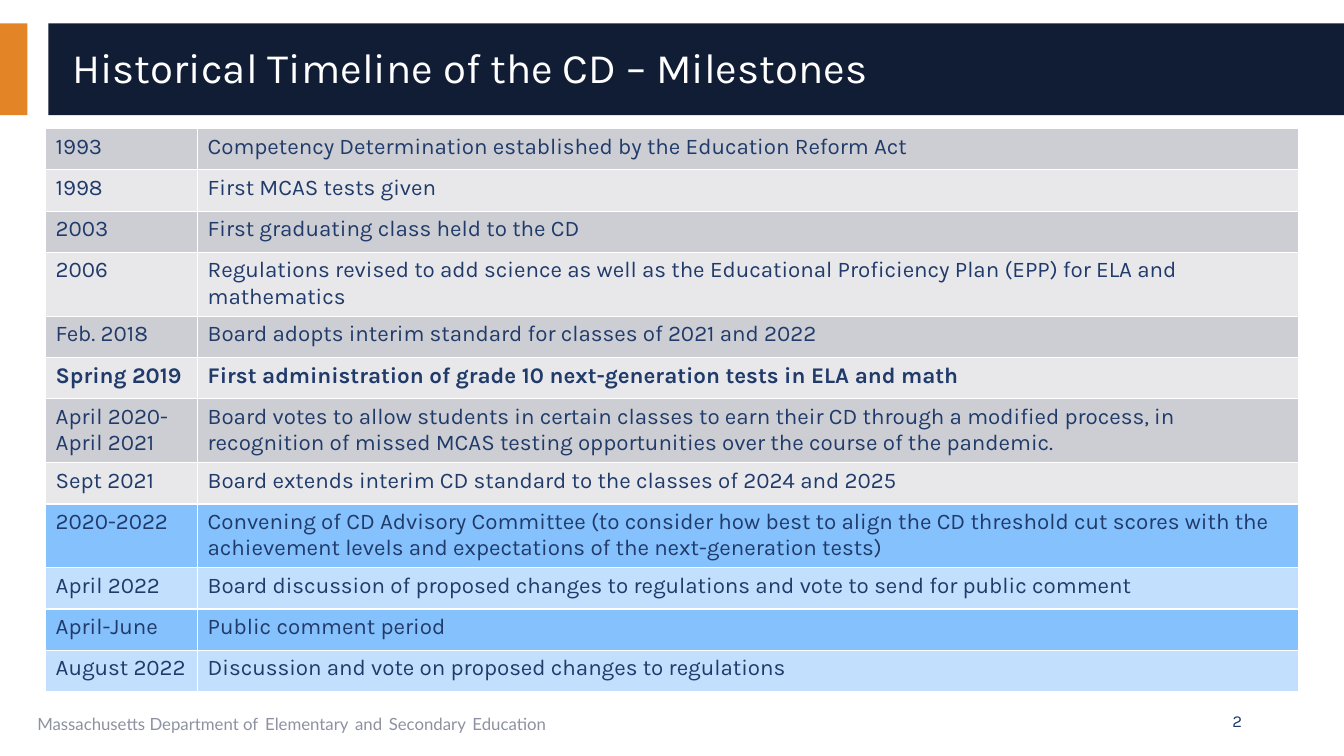
import itertools

import lxml.etree
import pptx
import pptx.dml.color
import pptx.enum.shapes
import pptx.enum.text
import pptx.oxml.ns
import pptx.util

COLORS = {
    "orange": "E38526",
    "navy": "101D35",
    "ink": "203B6A",
    "muted": "8D92A1",
    "white": "FFFFFF",
    "gray": "CDCED4",
    "pale_gray": "E8E8EB",
    "blue": "85C1FC",
    "pale_blue": "C2E0FD",
}

PAST = [
    ("1993", "Competency Determination established by the Education Reform Act"),
    ("1998", "First MCAS tests given"),
    ("2003", "First graduating class held to the CD"),
    ("2006", "Regulations revised to add science as well as the Educational "
             "Proficiency Plan (EPP) for ELA and mathematics"),
    ("Feb. 2018", "Board adopts interim standard for classes of 2021 and 2022"),
    ("Spring 2019", "First administration of grade 10 next-generation tests in ELA and math"),
    ("April 2020-April 2021", "Board votes to allow students in certain classes to earn their CD "
                              "through a modified process, in recognition of missed MCAS testing "
                              "opportunities over the course of the pandemic."),
    ("Sept 2021", "Board extends interim CD standard to the classes of 2024 and 2025"),
]
CURRENT = [
    ("2020-2022", "Convening of CD Advisory Committee (to consider how best to align the CD "
                  "threshold cut scores with the achievement levels and expectations of the "
                  "next-generation tests)"),
    ("April 2022", "Board discussion of proposed changes to regulations and vote to send for "
                   "public comment"),
    ("April-June", "Public comment period"),
    ("August 2022", "Discussion and vote on proposed changes to regulations"),
]
HIGHLIGHT = "Spring 2019"
FOOTER = ["Massachusetts Department of", "Elementary", "and", "Secondary", "Education"]


def rgb(color):
    return pptx.dml.color.RGBColor.from_string(COLORS[color])


def write(paragraph, text, size=16, color="ink", font="Karla", bold=False):
    run = paragraph.add_run()
    run.text = text
    run.font.size = pptx.util.Pt(size)
    run.font.name = font
    run.font.bold = bold
    run.font.color.rgb = rgb(color)


def place(*lengths):
    return [pptx.util.Cm(length) for length in lengths]


class Deck:
    def __init__(self):
        self.presentation = pptx.Presentation()
        self.presentation.slide_width = pptx.util.Cm(33.87)
        self.presentation.slide_height = pptx.util.Cm(19.05)
        self.slide = self.presentation.slides.add_slide(self.presentation.slide_layouts[5])

    def bar(self, bounds, color):
        bar = self.slide.shapes.add_shape(
            pptx.enum.shapes.MSO_SHAPE.RECTANGLE, *place(*bounds))
        bar.shadow.inherit = False
        bar.fill.solid()
        bar.fill.fore_color.rgb = rgb(color)
        bar.line.fill.background()
        self.slide.shapes.title.element.addprevious(bar.element)

    def title(self, text, bounds):
        title = self.slide.shapes.title
        title.left, title.top, title.width, title.height = place(*bounds)
        title.text_frame.auto_size = pptx.enum.text.MSO_AUTO_SIZE.NONE
        title.text_frame.vertical_anchor = pptx.enum.text.MSO_ANCHOR.MIDDLE
        heading = title.text_frame.paragraphs[0]
        heading.alignment = pptx.enum.text.PP_ALIGN.LEFT
        heading.line_spacing = 0.9
        write(heading, text, size=30, color="white")

    def text(self, bounds, align="LEFT", anchor="TOP"):
        frame = self.slide.shapes.add_textbox(*place(*bounds)).text_frame
        frame.word_wrap = True
        frame.vertical_anchor = pptx.enum.text.MSO_ANCHOR[anchor]
        frame.paragraphs[0].alignment = pptx.enum.text.PP_ALIGN[align]
        return frame.paragraphs[0]

    def border(self, cell):
        properties = cell._tc.get_or_add_tcPr()
        qn = pptx.oxml.ns.qn
        for side in ("a:lnL", "a:lnR", "a:lnT", "a:lnB"):
            line = lxml.etree.SubElement(properties, qn(side), w="12700")
            fill = lxml.etree.SubElement(line, qn("a:solidFill"))
            lxml.etree.SubElement(fill, qn("a:srgbClr"), val=COLORS["white"])

    def table(self, milestones, fills, bounds, widths):
        table = self.slide.shapes.add_table(
            len(milestones), len(widths), *place(*bounds)).table
        table.first_row = table.horz_banding = False
        for column, width in zip(table.columns, widths):
            column.width = pptx.util.Cm(width)
        for row, milestone, fill in zip(table.rows, milestones, fills):
            row.height = pptx.util.Cm(bounds[3] / len(milestones))
            for cell, text in zip(row.cells, milestone):
                self.border(cell)
                cell.fill.solid()
                cell.fill.fore_color.rgb = rgb(fill)
                write(cell.text_frame.paragraphs[0], text, bold=milestone[0] == HIGHLIGHT)


def main():
    deck = Deck()
    deck.bar((0, 0.59, 0.69, 2.31), "orange")
    deck.bar((1.22, 0.59, 32.65, 2.31), "navy")
    deck.title("Historical Timeline of the CD – Milestones", (1.57, 0.81, 31.6, 1.88))

    footer = deck.text((0.69, 17.65, 21.44, 1.02))
    for position, words in enumerate(FOOTER):
        if position:
            write(footer, " ", size=18, font="Lato")
        write(footer, words, size=12, color="muted", font="Lato")

    fills = itertools.chain(
        itertools.islice(itertools.cycle(["gray", "pale_gray"]), len(PAST)),
        itertools.islice(itertools.cycle(["blue", "pale_blue"]), len(CURRENT)))
    deck.table(PAST + CURRENT, fills, (1.15, 3.24, 31.58, 12.48), (3.83, 27.75))

    page_number = deck.text((23.93, 17.65, 7.62, 1.02), align="RIGHT", anchor="MIDDLE")
    write(page_number, "2", size=12)
    deck.presentation.save("out.pptx")


if __name__ == "__main__":
    main()
